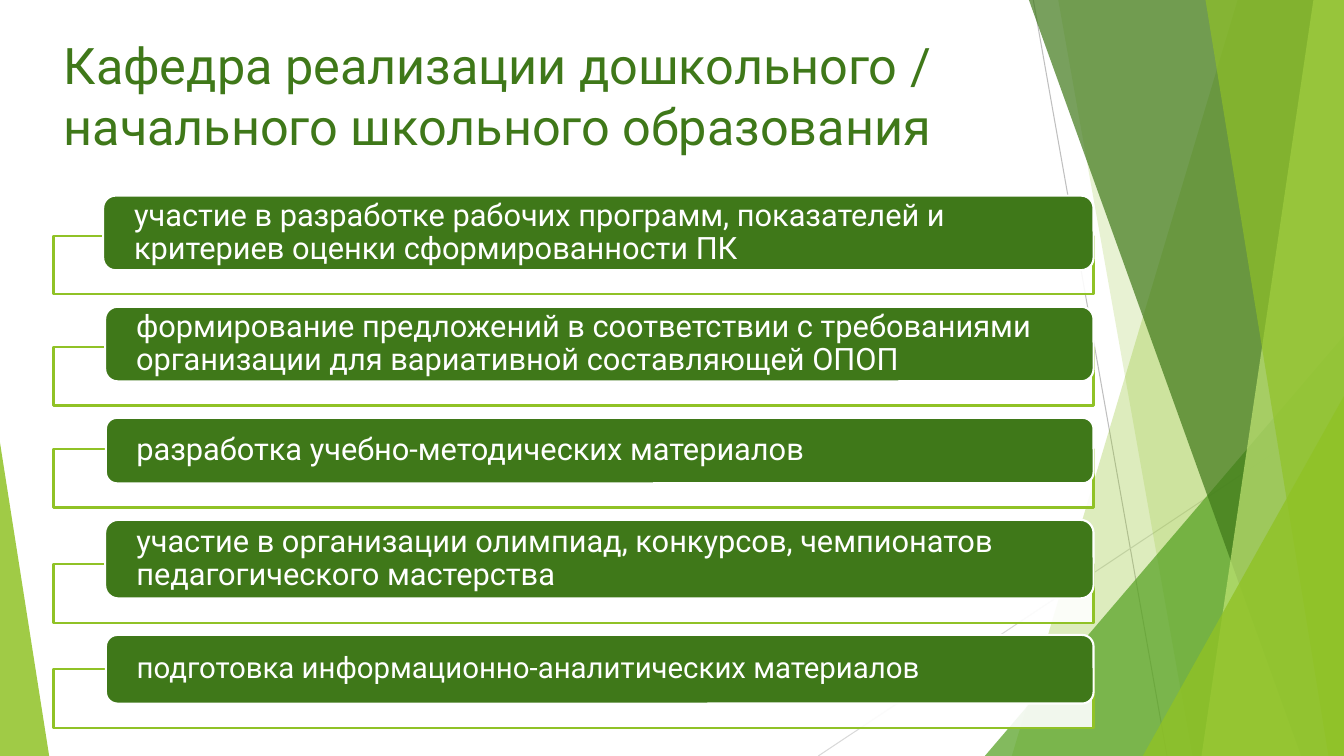
from lxml import etree
from pptx import Presentation
from pptx import util as u
from pptx.dml.color import RGBColor
from pptx.enum import shapes, text
from pptx.oxml.ns import qn

FONT = "Roboto"
DARK, LIME, WHITE = "3F7819", "90C226", "FFFFFF"
WIDTH, HEIGHT = 33.87, 19.05

TITLE = "Кафедра реализации дошкольного / начального школьного образования"
# Wording, text size, bar height, bar indent
DUTIES = [
    ("участие в разработке рабочих программ, показателей и критериев оценки сформированности ПК", 22, 1.88, 1.25),
    ("формирование предложений в соответствии с требованиями организации для вариативной составляющей ОПОП",
     22, 1.88, 1.3),
    ("разработка учебно-методических материалов", 22, 1.65, 1.32),
    ("участие в организации олимпиад, конкурсов, чемпионатов педагогического мастерства", 22, 1.98, 1.3),
    ("подготовка информационно-аналитических материалов", 21, 1.73, 1.32),
]


def color(hex_value):
    return RGBColor.from_string(hex_value)


def paint(shape, fill, opacity=100, line=None):
    """Fill a shape, with opacity in percent, and outline it if a line colour is given."""
    shape.shadow.inherit = False
    shape.fill.solid()
    shape.fill.fore_color.rgb = color(fill)
    if opacity < 100:
        value = shape.fill._xPr.find(".//" + qn("a:srgbClr"))
        etree.SubElement(value, qn("a:alpha")).set("val", str(opacity * 1000))
    if line:
        shape.line.color.rgb = color(line)
        shape.line.width = u.Pt(1.5)
    else:
        shape.line.fill.background()


def write(paragraph, wording, size, hex_value):
    run = paragraph.add_run()
    run.text = wording
    run.font.name = FONT
    run.font.size = u.Pt(size)
    run.font.color.rgb = color(hex_value)


def add_box(slide, kind, left, top, width, height):
    return slide.shapes.add_shape(kind, u.Cm(left), u.Cm(top), u.Cm(width), u.Cm(height))


def add_hairline(slide, start, end, hex_value):
    line = slide.shapes.add_connector(
        shapes.MSO_CONNECTOR.STRAIGHT, *(u.Cm(value) for value in start + end))
    line.line.color.rgb = color(hex_value)
    line.line.width = u.Pt(0.75)
    etree.SubElement(line._element.spPr, qn("a:effectLst"))


def add_band(slide, top_left, bottom_left, fill, opacity):
    """Fill the area from a slanted left edge to the right side of the slide."""
    builder = slide.shapes.build_freeform(u.Cm(top_left), 0)
    corners = [(WIDTH, 0), (WIDTH, HEIGHT), (bottom_left, HEIGHT)]
    builder.add_line_segments([(u.Cm(x), u.Cm(y)) for x, y in corners], close=True)
    paint(builder.convert_to_shape(), fill, opacity)


def add_corner(slide, left, top, width, apex, fill, opacity):
    """Draw a triangle standing on the lower edge; apex is 0 for left and 1 for right."""
    corner = add_box(slide, shapes.MSO_SHAPE.ISOSCELES_TRIANGLE, left, top, width, HEIGHT - top)
    corner.adjustments[0] = apex
    paint(corner, fill, opacity)


def add_backdrop(slide):
    add_hairline(slide, (26.04, 0), (29.41, HEIGHT), "BFBFBF")
    add_hairline(slide, (WIDTH, 10.24), (20.62, HEIGHT), "D9D9D9")
    add_band(slide, 31.19, 25.5, LIME, 30)
    add_band(slide, 26.67, 30.05, LIME, 20)
    add_corner(slide, 24.82, 8.46, 9.05, 1, "54A021", 72)
    add_band(slide, 25.93, 32.79, DARK, 70)
    add_band(slide, 33.1, 30.28, "C0E474", 70)
    add_band(slide, 30.38, 33.48, LIME, 65)
    add_corner(slide, 28.8, 9.98, 5.07, 1, LIME, 80)
    add_corner(slide, 0, 11.15, 1.24, 0, LIME, 85)


def add_title(slide, left, top, width, height):
    title = slide.shapes.title
    title.left, title.top, title.width, title.height = (
        u.Cm(value) for value in (left, top, width, height))
    frame = title.text_frame
    frame.word_wrap = True
    frame.auto_size = text.MSO_AUTO_SIZE.NONE
    frame.vertical_anchor = text.MSO_ANCHOR.TOP
    paragraph = frame.paragraphs[0]
    paragraph.alignment = text.PP_ALIGN.LEFT
    write(paragraph, TITLE, 36, DARK)


def add_bar(slide, left, top, width, height, wording, size):
    bar = add_box(slide, shapes.MSO_SHAPE.ROUNDED_RECTANGLE, left, top, width, height)
    paint(bar, DARK, line=WHITE)
    frame = bar.text_frame
    frame.word_wrap = True
    frame.vertical_anchor = text.MSO_ANCHOR.MIDDLE
    frame.margin_left = frame.margin_right = u.Cm(0.69)
    frame.margin_top = frame.margin_bottom = 0
    paragraph = frame.paragraphs[0]
    paragraph.alignment = text.PP_ALIGN.LEFT
    paragraph.line_spacing = 0.9
    write(paragraph, wording, size, WHITE)


def add_duties(slide, left, top, width):
    """Stack the duties, each a bar overlapping the frame beneath it."""
    overlap, frame_height, gap = 0.86, 1.47, 0.31
    for wording, size, bar_height, indent in DUTIES:
        frame_top = top + bar_height - overlap
        frame = add_box(slide, shapes.MSO_SHAPE.RECTANGLE, left, frame_top, width, frame_height)
        paint(frame, WHITE, 90, LIME)
        add_bar(slide, left + indent, top, width - indent, bar_height, wording, size)
        top = frame_top + frame_height + gap


def main():
    presentation = Presentation()
    presentation.slide_width, presentation.slide_height = u.Cm(WIDTH), u.Cm(HEIGHT)
    slide = presentation.slides.add_slide(presentation.slide_layouts[5])
    add_backdrop(slide)
    add_title(slide, 1.35, 0.74, 23.88, 3.66)
    add_duties(slide, 1.35, 4.93, 26.21)
    presentation.save("out.pptx")


if __name__ == "__main__":
    main()
